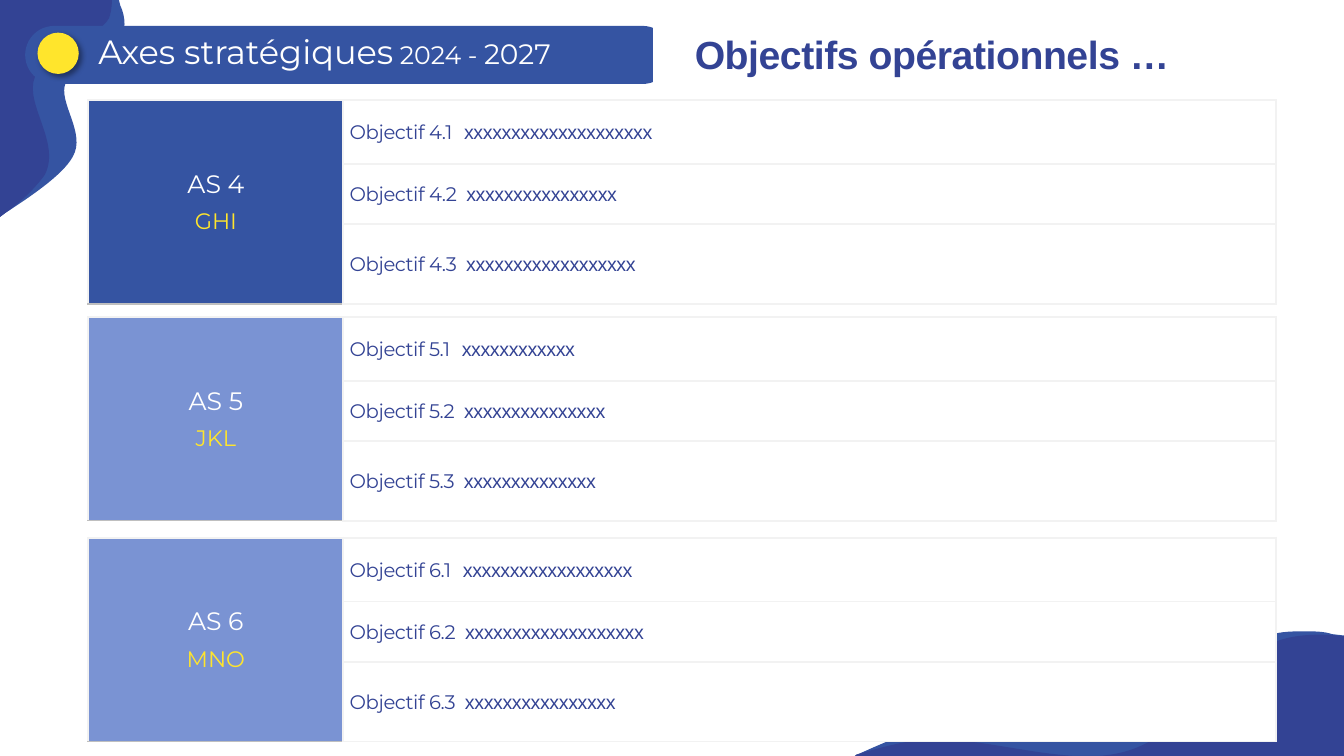
from lxml import etree
from pptx import Presentation
from pptx.dml.color import RGBColor
from pptx.enum import shapes, text
from pptx.oxml.ns import qn
from pptx.util import Pt

BLUE, NAVY, PALE = "3554A2", "334394", "7A93D3"
YELLOW, WHITE, GRID, GREY = "FFE52C", "FFFFFF", "F2F2F2", "BFBFBF"

WAVES = [
    (BLUE, [(4, 152), (21, 141, 45, 125, 52, 112), (62, 95, 41, 73, 47, 59),
            (53, 45, 81, 37, 87, 27), (89, 24, 89, 21, 89, 17),
            (89, 13, 88, 8, 86, 4), (85, 0), (0, 0), (0, 155)]),
    (NAVY, [(0, 155), (4, 152), (17, 143, 27, 132, 32, 125),
            (44, 102, 17, 74, 25, 55), (33, 37, 70, 27, 78, 13),
            (79, 10, 80, 6, 80, 0), (0, 0)]),
    (BLUE, [(952, 453), (946, 451, 940, 451, 932, 451),
            (922, 451, 912, 451, 901, 456), (874, 466, 848, 510, 813, 520),
            (778, 529, 727, 508, 690, 513), (666, 516, 637, 528, 615, 538),
            (611, 540), (960.5, 540), (960.5, 454)]),
    (NAVY, [(960.5, 454.5), (956, 454, 952, 453.5, 948, 453.5),
            (936, 453, 922, 454, 910, 459), (878, 472, 846, 526, 803.5, 537),
            (760, 549, 699, 523, 654, 529), (640, 531, 626, 535, 612, 539),
            (611, 540), (960.5, 540)]),
]

AXES = [
    (71.7, BLUE, 4, "GHI", (20, 16, 18)),
    (226.6, PALE, 5, "JKL", (12, 15, 14)),
    (384.2, PALE, 6, "MNO", (18, 19, 16)),
]


def rgb(color):
    """Turn a hex string into a colour."""
    return RGBColor.from_string(color)


def paint(sp, color):
    """Give a shape a flat fill without line or shadow."""
    sp.fill.solid()
    sp.fill.fore_color.rgb = rgb(color)
    sp.line.fill.background()
    sp.shadow.inherit = False


def style(font, size, color, name="Montserrat"):
    """Set size, colour and typeface of a font."""
    font.size, font.name = Pt(size), name
    font.color.rgb = rgb(color)


def add_run(p, words, size, color, name="Montserrat", spacing=0):
    """Append a formatted run with letter spacing in points."""
    r = p.add_run()
    r.text = words
    style(r.font, size, color, name)
    if spacing:
        r._r.get_or_add_rPr().set("spc", str(round(spacing * 100)))


def add_wave(s, color, steps):
    """Draw one corner decoration from points and Bézier curves."""
    steps = [[Pt(v) for v in step] for step in steps]
    builder = s.shapes.build_freeform(*steps[0], scale=1.0)
    builder.add_line_segments([step[-2:] for step in steps[1:]], close=True)
    sp = builder.convert_to_shape()
    paint(sp, color)
    for segment, step in zip(list(sp._element.iter(qn("a:lnTo"))), steps[1:]):
        if len(step) == 6:
            curve = etree.Element(qn("a:cubicBezTo"))
            for x, y in zip(step[::2], step[1::2]):
                etree.SubElement(curve, qn("a:pt"), x=str(x - sp.left), y=str(y - sp.top))
            segment.getparent().replace(segment, curve)


def add_dot(s, left, top, size):
    """Draw the yellow dot with its soft shadow."""
    sp = s.shapes.add_shape(shapes.MSO_SHAPE.OVAL, Pt(left), Pt(top), Pt(size), Pt(size))
    paint(sp, YELLOW)
    effects = sp._element.spPr.find(qn("a:effectLst"))
    shadow = etree.SubElement(effects, qn("a:outerShdw"), blurRad=str(Pt(4)),
                              dist=str(Pt(3)), dir="2700000", algn="tl", rotWithShape="0")
    tint = etree.SubElement(shadow, qn("a:srgbClr"), val="000000")
    etree.SubElement(tint, qn("a:alpha"), val="40000")


def add_banner(s):
    """Draw the blue banner, its heading and its dot."""
    sp = s.shapes.add_shape(shapes.MSO_SHAPE.ROUNDED_RECTANGLE, Pt(18), Pt(18.5), Pt(462), Pt(41.5))
    sp.adjustments[0] = 0.5
    paint(sp, BLUE)
    tf = s.shapes.add_textbox(Pt(63.2), Pt(18.4), Pt(397), Pt(36)).text_frame
    tf.word_wrap = True
    for words, size in (("Axes stratégiques", 24), (" 2024 - ", 18), ("2027", 20)):
        add_run(tf.paragraphs[0], words, size, WHITE)
    add_dot(s, 26.8, 23.3, 29.5)


def add_title(s):
    """Place the title over the right end of the banner."""
    sp = s.shapes.title
    sp.left, sp.top, sp.width, sp.height = Pt(466.8), Pt(18), Pt(445), Pt(41)
    sp.fill.solid()
    sp.fill.fore_color.rgb = rgb(WHITE)
    tf = sp.text_frame
    tf.auto_size = text.MSO_AUTO_SIZE.NONE
    tf.margin_left = Pt(29.7)
    p = tf.paragraphs[0]
    p.alignment = text.PP_ALIGN.LEFT
    add_run(p, "Objectifs opérationnels …", 28, NAVY, "Arial", -0.3)
    p.runs[0].font.bold = True
    s.shapes._spTree.append(sp._element)


def format_cell(cell, color, bottom=(GRID, 1.5)):
    """Set borders, fill and vertical centring of a cell."""
    tcPr = cell._tc.get_or_add_tcPr()
    for side in "LRTB":
        line, width = bottom if side == "B" else (GRID, 1.5)
        ln = etree.SubElement(tcPr, qn("a:ln" + side), w=str(Pt(width)))
        fill = etree.SubElement(ln, qn("a:solidFill"))
        etree.SubElement(fill, qn("a:srgbClr"), val=line)
    cell.fill.solid()
    cell.fill.fore_color.rgb = rgb(color)
    cell.vertical_anchor = text.MSO_ANCHOR.MIDDLE


def fill_axis(cell, number, label):
    """Write the number and the name of an axis."""
    tf = cell.text_frame
    tf.text = f"AS {number}\n{label}"
    for p, size, color in zip(tf.paragraphs, (18, 16), (WHITE, YELLOW)):
        p.alignment, p.space_after = text.PP_ALIGN.CENTER, Pt(6)
        style(p.font, size, color)


def fill_objective(cell, label, words, gap_font, gap):
    """Write an objective, a widened space and its wording."""
    cell.margin_left = cell.margin_right = Pt(4.5)
    cell.margin_top = cell.margin_bottom = Pt(2.25)
    p = cell.text_frame.paragraphs[0]
    add_run(p, label, 14, NAVY, spacing=-0.3)
    add_run(p, " ", 16, NAVY, gap_font, gap)
    add_run(p, words, 14, NAVY, "Arial", -0.3)


def add_axis(s, top, color, number, label, lengths):
    """Build the table of one axis and its objectives."""
    frame = s.shapes.add_table(len(lengths), 2, Pt(63.1), Pt(top), Pt(849), Pt(145.5))
    table = frame.table
    table.first_row = table.horz_banding = False
    for column, width in zip(table.columns, (182.3, 666.7)):
        column.width = Pt(width)
    for row, height in zip(table.rows, (45.5, 43, 57)):
        row.height = Pt(height)
    table.cell(0, 0).merge(table.cell(len(lengths) - 1, 0))
    for i, length in enumerate(lengths):
        format_cell(table.cell(i, 0), color, (GREY, 1))
        format_cell(table.cell(i, 1), WHITE)
        gap = ("Calibri", 3) if i else ("Arial", 3.85)
        fill_objective(table.cell(i, 1), f"Objectif {number}.{i + 1}", "x" * length, *gap)
    fill_axis(table.cell(0, 0), number, label)


def main():
    """Build the slide and save it."""
    prs = Presentation()
    prs.slide_width, prs.slide_height = Pt(960.5), Pt(540)
    s = prs.slides.add_slide(prs.slide_layouts[5])
    for color, steps in WAVES:
        add_wave(s, color, steps)
    add_banner(s)
    for axis in AXES:
        add_axis(s, *axis)
    add_title(s)
    prs.save("out.pptx")


if __name__ == "__main__":
    main()
